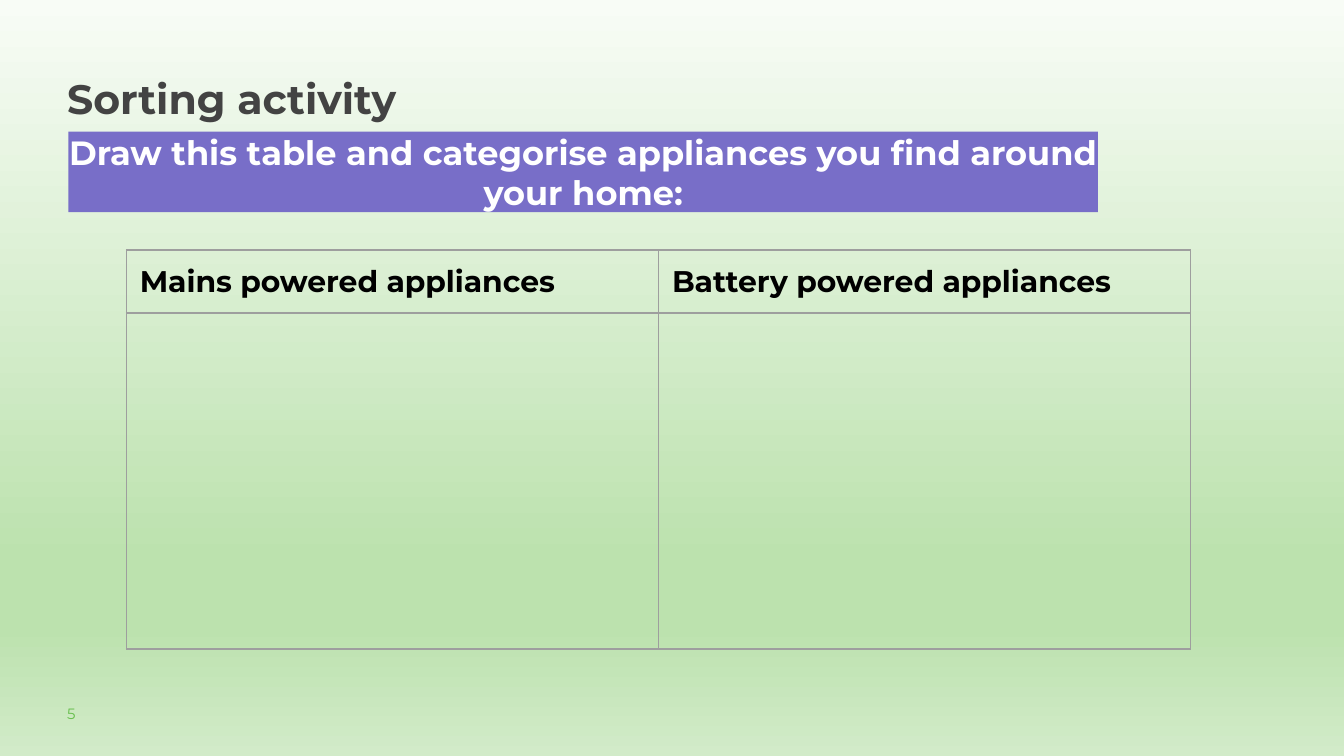
from dataclasses import dataclass

from lxml import etree
from pptx import Presentation
from pptx import util as u
from pptx.dml import color
from pptx.enum import shapes, text
from pptx.oxml import ns

FONT = "Montserrat"
SLIDE_WIDTH = 10
SLIDE_HEIGHT = SLIDE_WIDTH * 9 / 16
BACKGROUND_STOPS = [(0, "F8FCF6"), (74, "BCE2AE"), (83, "BCE2AE"), (100, "D2EBC9")]
HEADINGS = ["Mains powered appliances", "Battery powered appliances"]
ROW_HEIGHTS = [0.47, 2.5]
COLUMN_WIDTH = 3.96
BORDER_COLOUR = "9E9E9E"


@dataclass
class Label:
    wording: str
    left: float
    top: float
    width: float
    height: float
    size: float
    colour: str
    bold: bool = False
    fill: str = ""
    line_spacing: float = 1.0


LABELS = [
    Label("5", 0.5, 5.24, 0.79, 0.2, 8, "65BE4B"),
    Label("Draw this table and categorise appliances you find around your home:",
          0.51, 0.98, 7.66, 0.6, 18, "FFFFFF", bold=True, fill="786EC8"),
    Label("Sorting activity", 0.5, 0.49, 9, 0.4, 22, "434343", bold=True, line_spacing=1.15),
]


def rgb(value: str) -> color.RGBColor:
    return color.RGBColor.from_string(value)


def add_solid(parent, colour: str) -> None:
    solid = etree.SubElement(parent, ns.qn("a:solidFill"))
    etree.SubElement(solid, ns.qn("a:srgbClr"), val=colour)


def paint_background(page) -> None:
    fill = page.background.fill
    fill.gradient()
    gradient = page.background._cSld.find(".//" + ns.qn("a:gradFill"))
    stops = gradient.find(ns.qn("a:gsLst"))
    for stop in list(stops):
        stops.remove(stop)
    for percent, colour in BACKGROUND_STOPS:
        stop = etree.SubElement(stops, ns.qn("a:gs"), pos=str(percent * 1000))
        etree.SubElement(stop, ns.qn("a:srgbClr"), val=colour)
    gradient.find(ns.qn("a:lin")).set("ang", str(90 * 60000))


def style_paragraph(paragraph, size: float, colour: str, bold: bool) -> None:
    font = paragraph.font
    font.name = FONT
    font.size = u.Pt(size)
    font.bold = bold
    font.color.rgb = rgb(colour)


def add_label(page, label: Label) -> None:
    bounds = [u.Inches(n) for n in (label.left, label.top, label.width, label.height)]
    if label.fill:
        box = page.shapes.add_shape(shapes.MSO_SHAPE.RECTANGLE, *bounds)
        box.shadow.inherit = False
        box.fill.solid()
        box.fill.fore_color.rgb = rgb(label.fill)
        box.line.fill.background()
    else:
        box = page.shapes.add_textbox(*bounds)
    frame = box.text_frame
    frame.word_wrap = True
    frame.margin_left = frame.margin_right = frame.margin_top = frame.margin_bottom = 0
    frame.vertical_anchor = text.MSO_ANCHOR.MIDDLE if label.fill else text.MSO_ANCHOR.TOP
    paragraph = frame.paragraphs[0]
    paragraph.text = label.wording
    paragraph.alignment = text.PP_ALIGN.CENTER if label.fill else text.PP_ALIGN.LEFT
    paragraph.line_spacing = label.line_spacing
    style_paragraph(paragraph, label.size, label.colour, label.bold)


def style_cell(cell) -> None:
    cell.margin_left = cell.margin_right = u.Inches(0.1)
    cell.margin_top = cell.margin_bottom = u.Inches(0.1)
    properties = cell._tc.get_or_add_tcPr()
    for side in ("lnL", "lnR", "lnT", "lnB"):
        border = etree.SubElement(properties, ns.qn(f"a:{side}"), w=str(u.Pt(0.75)))
        add_solid(border, BORDER_COLOUR)
    cell.fill.background()


def add_sorting_table(page) -> None:
    table = page.shapes.add_table(
        len(ROW_HEIGHTS), len(HEADINGS), u.Inches(0.94), u.Inches(1.86),
        u.Inches(COLUMN_WIDTH * len(HEADINGS)), u.Inches(sum(ROW_HEIGHTS)),
    ).table
    table.horz_banding = False
    for row, height in zip(table.rows, ROW_HEIGHTS):
        row.height = u.Inches(height)
    for cell in table.iter_cells():
        style_cell(cell)
    for column, heading in enumerate(HEADINGS):
        paragraph = table.cell(0, column).text_frame.paragraphs[0]
        paragraph.text = heading
        style_paragraph(paragraph, 16, "000000", True)


def main() -> None:
    deck = Presentation()
    deck.slide_width = u.Inches(SLIDE_WIDTH)
    deck.slide_height = u.Inches(SLIDE_HEIGHT)
    page = deck.slides.add_slide(deck.slide_layouts[6])
    paint_background(page)
    for label in LABELS:
        add_label(page, label)
    add_sorting_table(page)
    deck.save("out.pptx")


if __name__ == "__main__":
    main()
